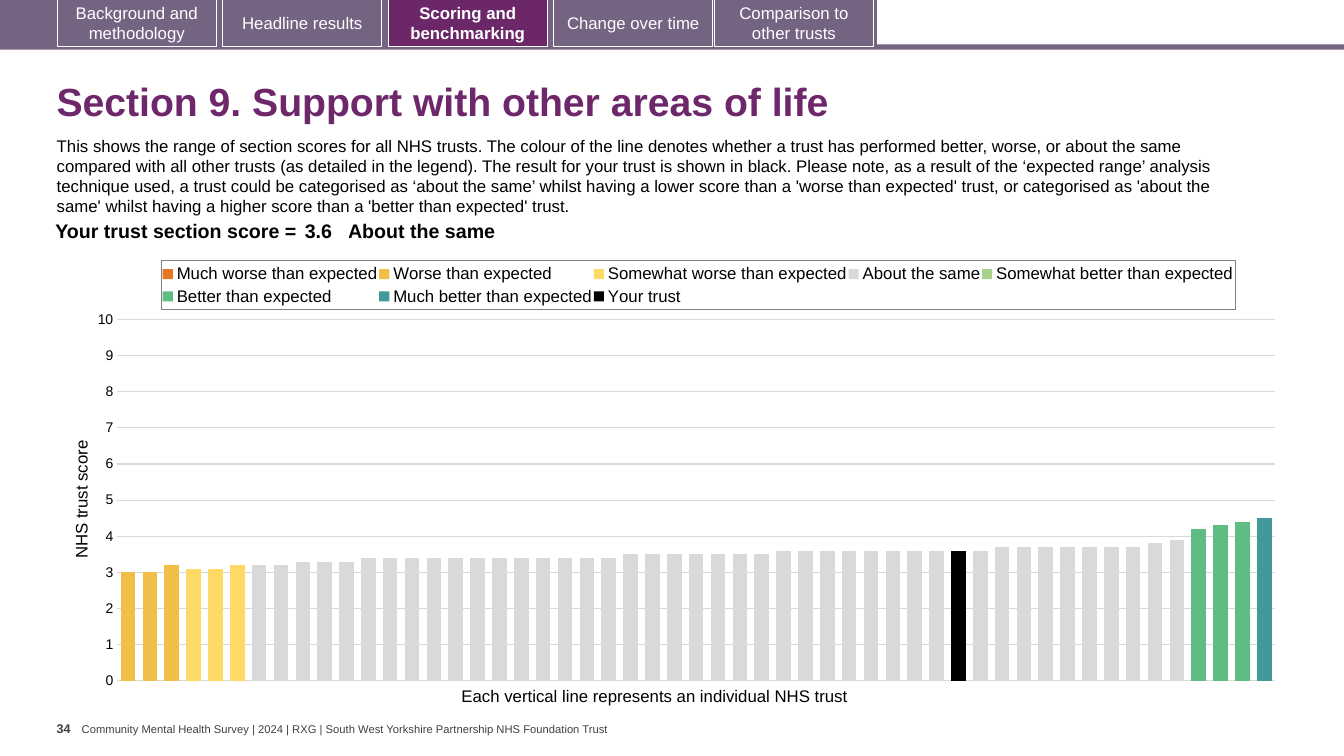
import copy
import pptx
import pptx.chart.data
import pptx.dml.color
import pptx.enum.chart
import pptx.enum.shapes
import pptx.enum.text
import pptx.oxml
import pptx.oxml.ns
import pptx.util
from dataclasses import dataclass

TABS = ["Background and methodology", "Headline results", "Scoring and benchmarking",
        "Change over time", "Comparison to other trusts"]
ACTIVE_TAB = "Scoring and benchmarking"
HEADING = "Section 9. Support with other areas of life"
INTRO = (
    "This shows the range of section scores for all NHS trusts. The colour of the line denotes "
    "whether a trust has performed better, worse, or about the same compared with all other trusts "
    "(as detailed in the legend). The result for your trust is shown in black. Please note, as a "
    "result of the ‘expected range’ analysis technique used, a trust could be categorised as "
    "‘about the same’ whilst having a lower score than a 'worse than expected' trust, or "
    "categorised as 'about the same' whilst having a higher score than a 'better than expected' trust."
)
# Text, column width (cm), alignment, side margin (cm)
SCORE_ROW = [("Your trust section score =", 6.68, "RIGHT", 0.1),
             ("3.6", 1.19, "LEFT", 0.1),
             ("About the same", 21.82, "LEFT", 0)]
SCORE_TITLE = "NHS trust score"
TRUST_CAPTION = "Each vertical line represents an individual NHS trust"
PAGE = "34"
FOOTER = "Community Mental Health Survey | 2024 | RXG | South West Yorkshire Partnership NHS Foundation Trust"

TRUST_COUNT = 53
# Name, colour, first trust (from 0), scores
BANDS = [
    ("Much worse than expected", "E87722", 0, []),
    ("Worse than expected", "F1BE48", 0, [3, 3, 3.2]),
    ("Somewhat worse than expected", "FFD966", 3, [3.1, 3.1, 3.2]),
    ("About the same", "D9D9D9", 6,
     [3.2] * 2 + [3.3] * 3 + [3.4] * 12 + [3.5] * 7 + [3.6] * 10 + [3.7] * 7 + [3.8, 3.9]),
    ("Somewhat better than expected", "A9D18E", 0, []),
    ("Better than expected", "5FBD83", 49, [4.2, 4.3, 4.4]),
    ("Much better than expected", "419999", 52, [4.5]),
    ("Your trust", "000000", 38, [3.6]),
]
CHART_WIDTH, CHART_HEIGHT = 30.86, 11.28


@dataclass(frozen=True)
class Theme:
    font: str = "Arial"
    black: str = "000000"
    white: str = "FFFFFF"
    grey: str = "404040"
    grid: str = "D9D9D9"
    frame: str = "7F7F7F"
    band: str = "756382"
    active: str = "6B2768"
    heading: str = "6D276A"
    heading_size: float = 28
    score_size: float = 14
    body_size: float = 12
    axis_size: float = 10
    page_size: float = 9
    footer_size: float = 8


THEME = Theme()
Cm, Pt = pptx.util.Cm, pptx.util.Pt
qn = pptx.oxml.ns.qn
ALIGN = pptx.enum.text.PP_ALIGN
ANCHOR = pptx.enum.text.MSO_ANCHOR


def rgb(colour):
    return pptx.dml.color.RGBColor.from_string(colour)


def apply(target, **values):
    for name, value in values.items():
        setattr(target, name, value)


def style(font, size, colour=THEME.black, bold=False):
    apply(font, name=THEME.font, size=Pt(size), bold=bold)
    font.color.rgb = rgb(colour)


def write(frame, text, size, colour=THEME.black, bold=False, align=None, **frame_format):
    apply(frame, **{"word_wrap": True, **frame_format})
    line = frame.paragraphs[0]
    line.text = text
    line.alignment = align
    style(line.runs[0].font, size, colour, bold)
    return line


def place(shape, left, top, width, height):
    apply(shape, left=Cm(left), top=Cm(top), width=Cm(width), height=Cm(height))


def add_rectangle(slide, box, fill, outline=None):
    shape = slide.shapes.add_shape(pptx.enum.shapes.MSO_SHAPE.RECTANGLE, *map(Cm, box))
    shape.shadow.inherit = False
    shape.fill.solid()
    shape.fill.fore_color.rgb = rgb(fill)
    if outline:
        shape.line.color.rgb = rgb(outline)
        shape.line.width = Pt(0.75)
    else:
        shape.line.fill.background()
    return shape


def add_text(slide, box, text, size, **text_format):
    write(slide.shapes.add_textbox(*map(Cm, box)).text_frame, text, size, **text_format)


def add_navigation(slide):
    add_rectangle(slide, (0, 1.12, 33.87, 0.13), THEME.band)
    add_rectangle(slide, (0, 0, 22.1, 1.19), THEME.band)
    for position, label in enumerate(TABS):
        active = label == ACTIVE_TAB
        left = min(1.45 + 4.17 * position, 18.01)
        tab = add_rectangle(slide, (left, -0.03, 4, 1.2),
                            THEME.active if active else THEME.band, THEME.white)
        write(tab.text_frame, label, THEME.body_size, THEME.white, active, ALIGN.CENTER,
              vertical_anchor=ANCHOR.MIDDLE)


def add_score_row(slide):
    table = slide.shapes.add_table(1, len(SCORE_ROW), Cm(0.9), Cm(5.46), Cm(29.69), Cm(0.79)).table
    apply(table, first_row=False, horz_banding=False)
    for column, cell, (text, width, align, side) in zip(table.columns, table.rows[0].cells, SCORE_ROW):
        column.width = Cm(width)
        cell.fill.background()
        apply(cell, margin_left=Cm(side), margin_right=Cm(side),
              margin_top=Cm(0.1), margin_bottom=Cm(0.1))
        write(cell.text_frame, text, THEME.score_size, bold=True, align=ALIGN[align])


def set_layout(element, index, target=None, **lengths):
    """Give a chart part a fixed place, in cm from the chart's top left corner."""
    for old in element.findall(qn("c:layout")):
        element.remove(old)
    inner = f'<c:layoutTarget val="{target}"/>' if target else ""
    inner += "".join(f'<c:{axis}Mode val="edge"/>' for axis in "xy")
    for name, length in lengths.items():
        inner += f'<c:{name} val="{length / (CHART_WIDTH if name in "xw" else CHART_HEIGHT)}"/>'
    element.insert(index, pptx.oxml.parse_xml(
        f'<c:layout {pptx.oxml.ns.nsdecls("c")}><c:manualLayout>{inner}</c:manualLayout></c:layout>'))


def add_legend(chart):
    chart.has_legend = True
    legend = chart.legend
    apply(legend, position=pptx.enum.chart.XL_LEGEND_POSITION.TOP, include_in_layout=False)
    style(legend.font, THEME.body_size)
    element = legend._element
    set_layout(element, 1, x=2.36, y=0.3, w=27.07, h=1.24)
    element.find(qn("c:overlay")).addnext(pptx.oxml.parse_xml(
        f'<c:spPr {pptx.oxml.ns.nsdecls("c", "a")}><a:noFill/><a:ln w="9525"><a:solidFill>'
        f'<a:srgbClr val="{THEME.frame}"/></a:solidFill></a:ln></c:spPr>'))


def move_last_series_to_right_axis(chart):
    area = chart._chartSpace.chart.plotArea
    bars, trusts, scores = (area.find(qn(f"c:{tag}")) for tag in ("barChart", "catAx", "valAx"))
    right_bars, right_trusts, right_scores = map(copy.deepcopy, (bars, trusts, scores))
    bars.remove(bars.findall(qn("c:ser"))[-1])
    for series in right_bars.findall(qn("c:ser"))[:-1]:
        right_bars.remove(series)
    for tag in ("c:majorGridlines", "c:title"):
        right_scores.remove(right_scores.find(qn(tag)))
    for tag, value in {"axPos": "r", "majorTickMark": "out", "tickLblPos": "none",
                       "crosses": "max"}.items():
        right_scores.find(qn(f"c:{tag}")).set("val", value)
    trust_id, score_id = "50010", "50020"
    for part, tag, ids in ((right_bars, "axId", (trust_id, score_id)),
                           (right_trusts, "axId", (trust_id,)), (right_trusts, "crossAx", (score_id,)),
                           (right_scores, "axId", (score_id,)), (right_scores, "crossAx", (trust_id,))):
        for element, number in zip(part.findall(qn(f"c:{tag}")), ids):
            element.set("val", number)
    bars.addnext(right_bars)
    scores.addnext(right_scores)
    right_scores.addnext(right_trusts)


def add_score_chart(slide):
    scores = pptx.chart.data.CategoryChartData(number_format="0.0")
    scores.categories = [str(trust + 1) for trust in range(TRUST_COUNT)]
    for name, _, first, values in BANDS:
        after = TRUST_COUNT - first - len(values)
        scores.add_series(name, [None] * first + values + [None] * after)
    chart = slide.shapes.add_chart(pptx.enum.chart.XL_CHART_TYPE.COLUMN_CLUSTERED, Cm(1.7), Cm(6.27),
                                   Cm(CHART_WIDTH), Cm(CHART_HEIGHT), scores).chart
    chart.has_title = False
    style(chart.font, THEME.axis_size)
    plot = chart.plots[0]
    apply(plot, gap_width=50, overlap=100, vary_by_categories=False)
    for series, (_, colour, _, _) in zip(plot.series, BANDS):
        series.format.fill.solid()
        series.format.fill.fore_color.rgb = rgb(colour)

    chart.category_axis.visible = False
    axis = chart.value_axis
    no_mark = pptx.enum.chart.XL_TICK_MARK.NONE
    apply(axis, minimum_scale=0, maximum_scale=10, major_unit=1,
          major_tick_mark=no_mark, minor_tick_mark=no_mark)
    apply(axis.tick_labels, number_format="0", number_format_is_linked=False)
    style(axis.tick_labels.font, THEME.axis_size)
    axis.format.line.fill.background()
    axis.major_gridlines.format.line.color.rgb = rgb(THEME.grid)
    axis.major_gridlines.format.line.width = Pt(0.75)
    write(axis.axis_title.text_frame, SCORE_TITLE, THEME.body_size)
    set_layout(axis.axis_title._element, 1, x=0.01, y=4.75)
    set_layout(chart._chartSpace.chart.plotArea, 0, "inner", x=1.25, y=1.78, w=29.19, h=9.11)
    move_last_series_to_right_axis(chart)
    add_legend(chart)


def main():
    deck = pptx.Presentation()
    apply(deck, slide_width=Cm(33.87), slide_height=Cm(19.05))
    slide = deck.slides.add_slide(deck.slide_layouts[5])

    add_navigation(slide)
    place(slide.shapes.title, 1.17, 1.7, 31.72, 1.83)
    heading = write(slide.shapes.title.text_frame, HEADING, THEME.heading_size, THEME.heading, True,
                    ALIGN.LEFT, vertical_anchor=ANCHOR.MIDDLE)
    heading.line_spacing = 0.9
    add_text(slide, (1.18, 3.29, 30.81, 2.31), INTRO, THEME.body_size)
    add_score_chart(slide)
    add_score_row(slide)
    add_text(slide, (11.38, 17.15, 10.44, 0.76), TRUST_CAPTION, THEME.body_size, word_wrap=False)
    add_text(slide, (1.43, 18.03, 0.64, 1.02), PAGE, THEME.page_size, colour=THEME.grey, bold=True,
             word_wrap=False, margin_left=0, margin_right=0)
    add_text(slide, (2.06, 18.2, 13.46, 0.33), FOOTER, THEME.footer_size, colour=THEME.grey,
             word_wrap=False, vertical_anchor=ANCHOR.MIDDLE,
             margin_left=0, margin_right=0, margin_top=0, margin_bottom=0)
    deck.save("out.pptx")


if __name__ == "__main__":
    main()
